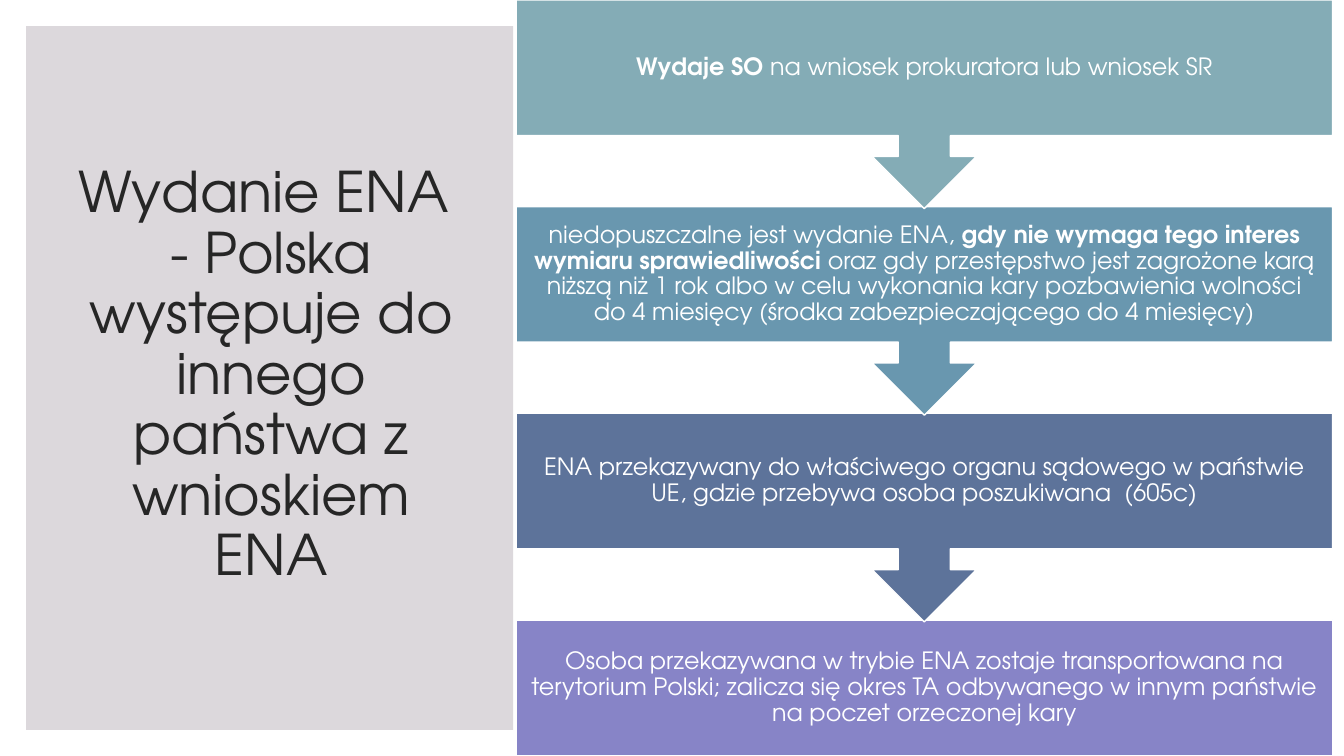
from pptx import Presentation
from pptx.dml.color import RGBColor
from pptx.enum.shapes import MSO_SHAPE
from pptx.enum.text import MSO_ANCHOR, PP_ALIGN
from pptx.util import Inches, Pt

RECTANGLE = MSO_SHAPE.RECTANGLE
DOWN_CALLOUT = MSO_SHAPE.DOWN_ARROW_CALLOUT
MIDDLE = MSO_ANCHOR.MIDDLE
CENTER = PP_ALIGN.CENTER

TITLE = "Wydanie ENA \v- Polska występuje do innego państwa z wnioskiem ENA"
STEPS = [
    ("84ACB6", [("Wydaje SO ", True),
                ("na wniosek prokuratora lub wniosek SR", False)]),
    ("6997AF", [("niedopuszczalne jest wydanie ENA, ", False),
                ("gdy nie wymaga tego interes wymiaru sprawiedliwości", True),
                (" oraz gdy przestępstwo jest zagrożone karą niższą niż 1 rok albo "
                 "w celu wykonania kary pozbawienia wolności do 4 miesięcy "
                 "(środka zabezpieczającego do 4 miesięcy)", False)]),
    ("5D739A", [("ENA przekazywany do właściwego organu sądowego w państwie UE, "
                 "gdzie przebywa osoba poszukiwana  (605c)", False)]),
    ("8784C7", [("Osoba przekazywana w trybie ENA zostaje transportowana na "
                 "terytorium Polski; zalicza się okres TA odbywanego w innym "
                 "państwie na poczet orzeczonej kary", False)]),
]
STEP_LEFT, STEP_WIDTH = 38.4, 60.75
STEP_PITCH, CALLOUT_HEIGHT, BOX_HEIGHT = 27.33, 27.6, 18


def color(value):
    return RGBColor.from_string(value)


class SlideBuilder:
    font_name = "TeX Gyre Adventor"

    def __init__(self, presentation):
        self.width = presentation.slide_width
        self.height = presentation.slide_height
        self.slide = presentation.slides.add_slide(presentation.slide_layouts[6])

    def area(self, left, top, width, height):
        return (int(self.width * left / 100), int(self.height * top / 100),
                int(self.width * width / 100), int(self.height * height / 100))

    def style_text(self, text_frame, size, text_color):
        text_frame.word_wrap = True
        text_frame.vertical_anchor = MIDDLE
        paragraph = text_frame.paragraphs[0]
        paragraph.alignment = CENTER
        paragraph.line_spacing = 0.9
        paragraph.font.name = self.font_name
        paragraph.font.size = Pt(size)
        paragraph.font.color.rgb = color(text_color)
        return paragraph

    def block(self, kind, fill, *area, outline=None):
        shape = self.slide.shapes.add_shape(kind, *self.area(*area))
        shape.shadow.inherit = False
        shape.fill.solid()
        shape.fill.fore_color.rgb = color(fill)
        if outline:
            shape.line.color.rgb = color(outline)
            shape.line.width = Pt(1)
        else:
            shape.line.fill.background()
        return shape

    def title(self, text, *area):
        box = self.slide.shapes.add_textbox(*self.area(*area))
        self.style_text(box.text_frame, 40, "262626").text = text

    def step(self, kind, fill, runs, top, height):
        shape = self.block(kind, fill, STEP_LEFT, top, STEP_WIDTH, height,
                           outline="FFFFFF")
        frame = shape.text_frame
        frame.margin_left = frame.margin_right = Inches(0.13)
        frame.margin_top = frame.margin_bottom = Inches(0.13)
        paragraph = self.style_text(frame, 17, "FFFFFF")
        for text, bold in runs:
            run = paragraph.add_run()
            run.text = text
            run.font.bold = bold


def main():
    presentation = Presentation()
    presentation.slide_width = Inches(13.33)
    presentation.slide_height = Inches(7.5)
    builder = SlideBuilder(presentation)
    builder.block(RECTANGLE, "DCD8DC", 1.95, 3.47, 36.23, 93.07)
    builder.title(TITLE, 4.73, 8.13, 30.9, 83.2)
    last = len(STEPS) - 1
    for index, (fill, runs) in reversed(list(enumerate(STEPS))):
        kind, height = ((RECTANGLE, BOX_HEIGHT) if index == last
                        else (DOWN_CALLOUT, CALLOUT_HEIGHT))
        builder.step(kind, fill, runs, index * STEP_PITCH, height)
    presentation.save("out.pptx")


if __name__ == "__main__":
    main()
